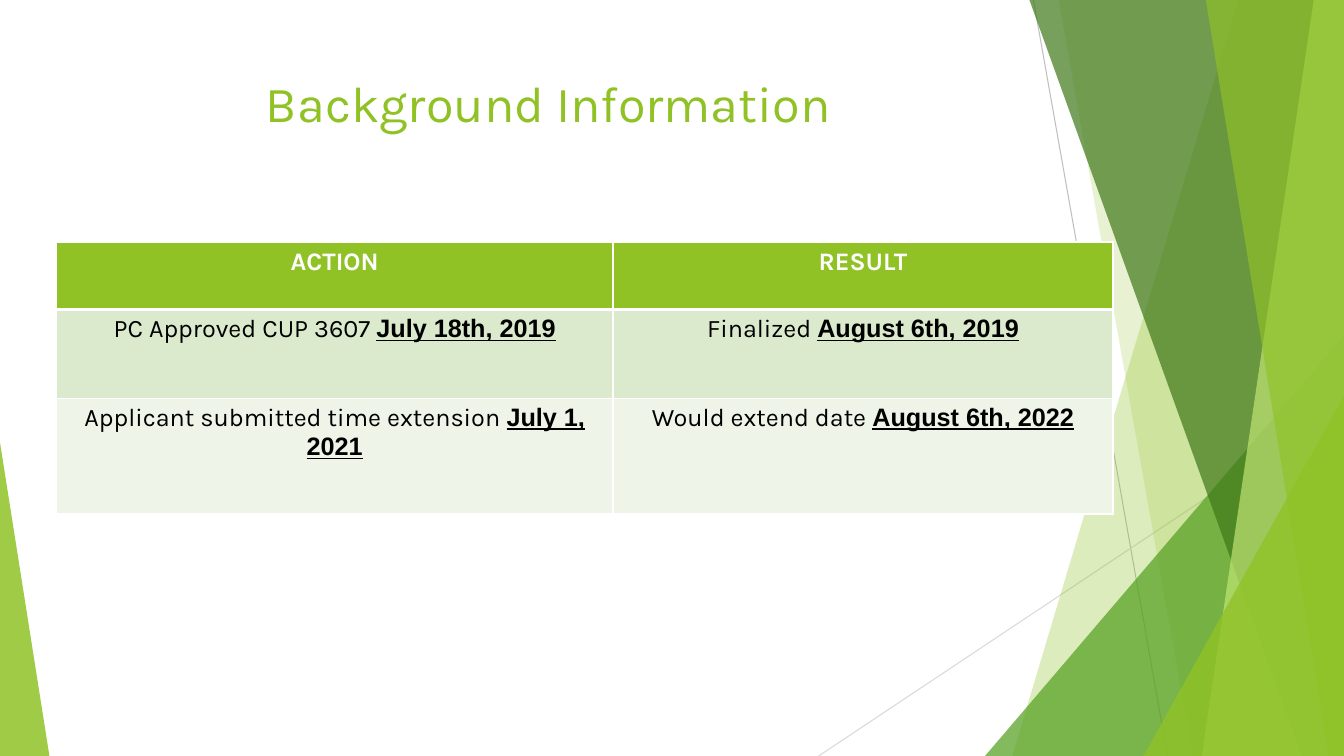
from dataclasses import dataclass

from lxml.etree import SubElement
from pptx import Presentation
from pptx.dml.color import RGBColor
from pptx.enum.shapes import MSO_CONNECTOR as Connector
from pptx.enum.shapes import MSO_SHAPE as Preset
from pptx.enum.text import MSO_ANCHOR as Anchor
from pptx.enum.text import PP_ALIGN as Align
from pptx.oxml.ns import qn
from pptx.util import Inches, Pt


@dataclass(frozen=True)
class Theme:
    lime: str = "90C226"
    green: str = "54A021"
    forest: str = "3F7819"
    pale_lime: str = "C0E474"
    light_rule: str = "D9D9D9"
    dark_rule: str = "BFBFBF"
    white: str = "FFFFFF"
    black: str = "000000"
    row_fills: tuple = ("90C226", "DBE9CD", "EEF4E8")
    title_size: int = 36
    table_size: int = 18


THEME = Theme()
WIDTH, HEIGHT = 13.33, 7.5
COLUMN_WIDTHS = (5.52, 4.96)
ROW_HEIGHTS = (0.67, 0.88, 1.15)

HEADING = {"name": "Karla", "size": Pt(THEME.title_size), "bold": False}
HEADER = {"name": "Karla", "size": Pt(THEME.table_size), "bold": True}
BODY = {**HEADER, "bold": False}
DATE = {**HEADER, "name": "Arial", "underline": True}

ACTIONS = (
    ((("ACTION", HEADER),), (("RESULT", HEADER),)),
    (
        (("PC Approved CUP 3607 ", BODY), ("July 18th, 2019", DATE)),
        (("Finalized ", BODY), ("August 6th, 2019", DATE)),
    ),
    (
        (("Applicant submitted time extension ", BODY), ("July 1, 2021", DATE)),
        (("Would extend date ", BODY), ("August 6th, 2022", DATE)),
    ),
)


def rgb(color):
    return RGBColor.from_string(color)


def add_run(paragraph, text, style, color):
    run = paragraph.add_run()
    run.text = text
    for attribute, value in style.items():
        setattr(run.font, attribute, value)
    run.font.color.rgb = rgb(color)


def paint(shape, color, opacity):
    shape.shadow.inherit = False
    shape.line.fill.background()
    shape.fill.solid()
    shape.fill.fore_color.rgb = rgb(color)
    tint = shape.fill._xPr.find(qn("a:solidFill"))[0]
    SubElement(tint, qn("a:alpha"), val=str(opacity * 1000))


def add_rule(slide, start, end, color):
    ends = [Inches(value) for value in (*start, *end)]
    rule = slide.shapes.add_connector(Connector.STRAIGHT, *ends)
    rule.line.color.rgb = rgb(color)
    rule.line.width = Pt(0.75)
    SubElement(rule._element.spPr, qn("a:effectLst"))


def add_pane(slide, top_left, bottom_left, color, opacity):
    corners = [(top_left, 0), (WIDTH, 0), (WIDTH, HEIGHT), (bottom_left, HEIGHT)]
    points = [(Inches(x), Inches(y)) for x, y in corners]
    outline = slide.shapes.build_freeform(*points[0])
    outline.add_line_segments(points[1:], close=True)
    paint(outline.convert_to_shape(), color, opacity)


def add_corner(slide, left, top, width, apex, color, opacity):
    box = [Inches(value) for value in (left, top, width, HEIGHT - top)]
    corner = slide.shapes.add_shape(Preset.ISOSCELES_TRIANGLE, *box)
    corner.adjustments[0] = apex
    paint(corner, color, opacity)


def add_facets(slide):
    add_rule(slide, (10.25, 0), (11.58, HEIGHT), THEME.dark_rule)
    add_rule(slide, (WIDTH, 4.03), (8.12, HEIGHT), THEME.light_rule)
    add_pane(slide, 12.28, 10.04, THEME.lime, 30)
    add_pane(slide, 10.5, 11.83, THEME.lime, 20)
    add_corner(slide, 9.77, 3.33, 3.56, 1, THEME.green, 72)
    add_pane(slide, 10.21, 12.91, THEME.forest, 70)
    add_pane(slide, 13.03, 11.92, THEME.pale_lime, 70)
    add_pane(slide, 11.96, 13.18, THEME.lime, 65)
    add_corner(slide, 11.34, 3.93, 1.99, 1, THEME.lime, 80)
    add_corner(slide, 0, 4.39, 0.49, 0, THEME.lime, 85)


def set_title(slide, text):
    title = slide.shapes.title
    bounds = {"left": 0.74, "top": 0.67, "width": 9.4, "height": 1.44}
    for attribute, value in bounds.items():
        setattr(title, attribute, Inches(value))
    title.text_frame.vertical_anchor = Anchor.TOP
    paragraph = title.text_frame.paragraphs[0]
    paragraph.alignment = Align.CENTER
    add_run(paragraph, text, HEADING, THEME.lime)


def set_borders(cell, widths):
    properties = cell._tc.get_or_add_tcPr()
    for side, points in widths.items():
        border = SubElement(properties, qn(f"a:ln{side}"), w=str(Pt(points)))
        fill = SubElement(border, qn("a:solidFill"))
        SubElement(fill, qn("a:srgbClr"), val=THEME.white)


def fill_cell(cell, runs, row):
    top, bottom = 3 if row == 1 else 1, 3 if row == 0 else 1
    set_borders(cell, {"L": 1, "R": 1, "T": top, "B": bottom})
    cell.fill.solid()
    cell.fill.fore_color.rgb = rgb(THEME.row_fills[row])
    paragraph = cell.text_frame.paragraphs[0]
    paragraph.alignment = Align.CENTER
    for text, style in runs:
        add_run(paragraph, text, style, THEME.black if row else THEME.white)


def add_action_table(slide):
    box = (0.56, 2.4, sum(COLUMN_WIDTHS), sum(ROW_HEIGHTS))
    frame = slide.shapes.add_table(
        len(ROW_HEIGHTS), len(COLUMN_WIDTHS), *[Inches(value) for value in box]
    )
    actions = frame.table
    for column, width in zip(actions.columns, COLUMN_WIDTHS):
        column.width = Inches(width)
    for row, height in zip(actions.rows, ROW_HEIGHTS):
        row.height = Inches(height)
    for row, entries in enumerate(ACTIONS):
        for column, runs in enumerate(entries):
            fill_cell(actions.cell(row, column), runs, row)


def main():
    deck = Presentation()
    deck.slide_width, deck.slide_height = Inches(WIDTH), Inches(HEIGHT)
    slide = deck.slides.add_slide(deck.slide_layouts.get_by_name("Title Only"))
    add_facets(slide)
    set_title(slide, "Background Information")
    add_action_table(slide)
    deck.save("out.pptx")


if __name__ == "__main__":
    main()
